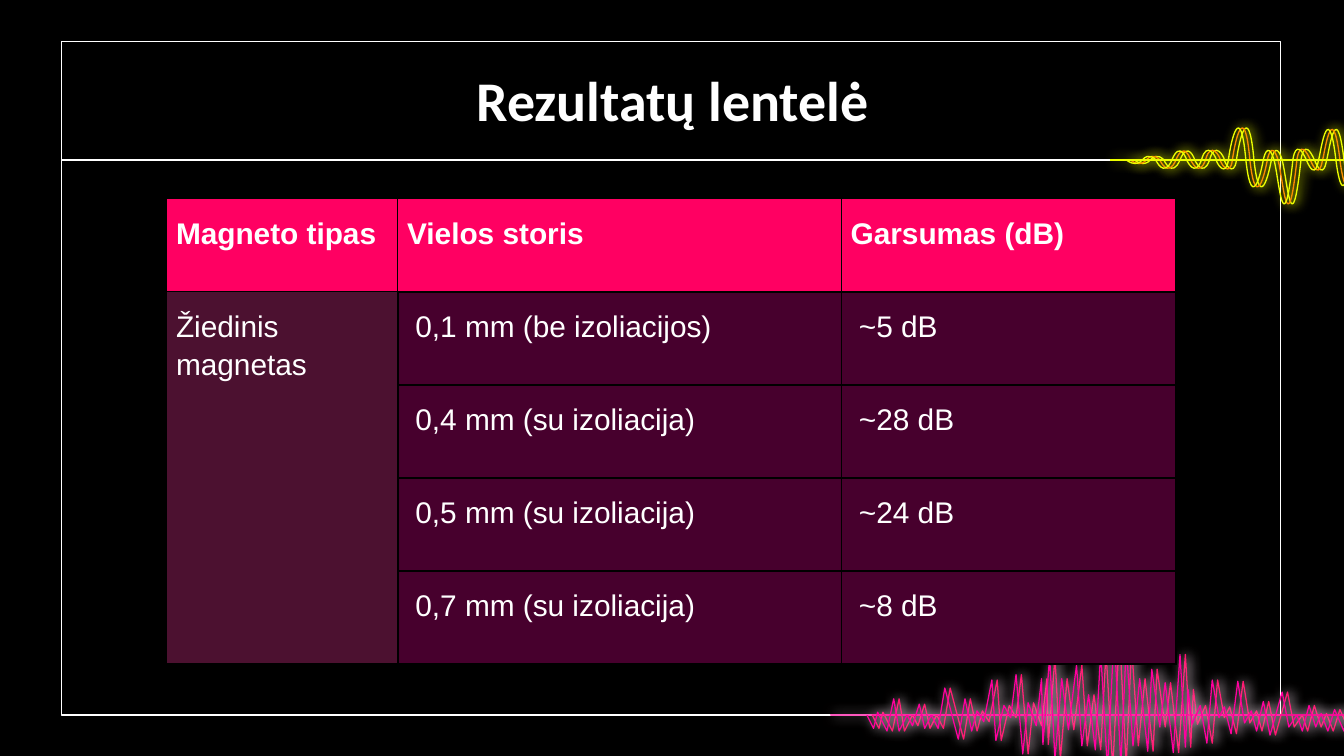
from lxml import etree
from pptx import Presentation
from pptx import util as u
from pptx.dml.color import RGBColor
from pptx.enum import shapes, text
from pptx.oxml import parse_xml
from pptx.oxml.ns import nsdecls, qn

C = {"black": "000000", "white": "FFFFFF", "yellow": "EDFF00", "orange": "FF7D00",
     "pink": "FF0062", "magenta": "FF009E", "glow": "FFEBF8",
     "plum": "4C1130", "wine": "47002D"}


def outline(sp, color, width, glow=None):
    sp.line.color.rgb = RGBColor.from_string(C[color])
    sp.line.width = u.Pt(width)
    effects = etree.SubElement(sp._element.spPr, qn("a:effectLst"))
    if glow:
        effects.append(parse_xml(
            f'<a:outerShdw {nsdecls("a")} blurRad="{u.Pt(6.8)}" dist="{u.Pt(1.5)}" dir="0" '
            f'algn="bl" rotWithShape="0"><a:srgbClr val="{C[glow]}"/></a:outerShdw>'))


def trace(points, close):
    pts = [(u.Inches(x), u.Inches(y)) for x, y in points]
    fb = s.shapes.build_freeform(*pts[0])
    fb.add_line_segments(pts[1:], close=close)
    sp = fb.convert_to_shape()
    sp.fill.background()
    return sp


prs = Presentation()
prs.slide_width = u.Inches(10)
prs.slide_height = u.Inches(10 * 9 / 16)
s = prs.slides.add_slide(prs.slide_layouts[5])
s.background.fill.solid()
s.background.fill.fore_color.rgb = RGBColor.from_string(C["black"])

frame = s.shapes.add_shape(shapes.MSO_SHAPE.ROUNDED_RECTANGLE, u.Inches(0.46),
                           u.Inches(0.31), u.Inches(9.07), u.Inches(5.01))
frame.adjustments[0] = 0
frame.fill.background()
outline(frame, "white", 0.75)

AXIS = 1.19
rule = s.shapes.add_connector(shapes.MSO_CONNECTOR.STRAIGHT, u.Inches(0.46),
                              u.Inches(AXIS), u.Inches(9.54), u.Inches(AXIS))
outline(rule, "white", 0.75)

CURVES = [
    (8.38, 1.19, 8.45, 1.25, 8.5), (8.55, 1.13, 8.6, 1.19, 8.6),
    (8.6, 1.19, 8.66, 1.33, 8.72), (8.78, 1.04, 8.83, 1.19, 8.83),
    (8.83, 1.19, 8.89, 1.33, 8.94), (8.98, 1.04, 9.05, 1.17, 9.05),
    (9.05, 1.21, 9.12, 1.33, 9.14), (9.16, 1.04, 9.23, 0.74, 9.27),
    (9.32, 1.64, 9.4, 1.19, 9.4), (9.4, 1.19, 9.43, 1.03, 9.48),
    (9.52, 1.35, 9.55, 1.84, 9.62), (9.62, 1.19, 9.64, 1.01, 9.72),
    (9.79, 1.36, 9.81, 1.19, 9.81), (9.82, 1.19, 9.88, 0.68, 9.94),
    (9.94, 1.19, 9.99, 1.62, 10.04), (10.1, 0.76, 10.11, 0.51, 10.18),
    (10.18, 1.19, 10.21, 1.34, 10.28), (10.34, 1.04, 10.37, 1.15, 10.38),
    (10.38, 1.22, 10.46, 1.3, 10.48), (10.5, 1.07, 10.58, 1.13, 10.61),
    (10.63, 1.25, 10.69, 1.27, 10.69), (10.69, 1.11, 10.77, 0.28, 10.83),
    (10.83, 1.19, 10.9, 2.03, 10.96), (10.96, 1.19, 10.99, 0.99, 11.04),
    (11.04, 1.19, 11.1, 1.61, 11.15), (11.15, 1.19, 11.21, 0.63, 11.28),
    (11.28, 1.19, 11.3, 1.34, 11.35), (11.41, 1.04, 11.46, 1.15, 11.48),
    (11.51, 1.23, 11.55, 1.21, 11.58), (11.61, 1.16, 11.64, 1.14, 11.69)]
for color, dx in [("yellow", 0.06), ("orange", 0.03), ("axis", 0), ("yellow", 0)]:
    if color == "axis":
        outline(trace([(8.26, AXIS), (11.82, AXIS)], False), "yellow", 0.71, "yellow")
        continue
    points = [(8.38 + dx, AXIS)]
    for x1, y1, x2, y2, x in CURVES:
        points += [(x1 + dx, y1), (x2 + dx, y2), (x + dx, AXIS)]
    wave = trace(points, False)
    track = next(wave._element.iter(qn("a:path")))
    segments = track.findall(qn("a:lnTo"))
    for i in range(0, len(segments), 3):
        curve = etree.SubElement(track, qn("a:cubicBezTo"))
        for seg in segments[i:i + 3]:
            curve.append(seg[0])
            track.remove(seg)
    outline(wave, color, 0.71, "yellow")

BASE = 5.32
PEAKS = [
    (10.16, 5.32), (10.12, 5.39), (10.07, 5.3), (10.04, 5.44), (9.97, 5.28), (9.92, 5.44),
    (9.87, 5.31), (9.83, 5.41), (9.78, 5.25), (9.73, 5.44), (9.69, 5.32), (9.63, 5.41),
    (9.58, 5.15), (9.49, 5.47), (9.44, 5.22), (9.39, 5.44), (9.35, 5.29), (9.3, 5.38),
    (9.25, 5.07), (9.2, 5.46), (9.15, 5.26), (9.11, 5.34), (9.06, 5.06), (9.02, 5.53),
    (8.97, 5.25), (8.91, 5.39), (8.88, 5.13), (8.86, 5.56), (8.82, 4.87), (8.77, 5.6),
    (8.71, 5.08), (8.67, 5.41), (8.61, 4.98), (8.58, 5.59), (8.52, 5.05), (8.47, 5.55),
    (8.42, 4.81), (8.38, 5.69), (8.33, 4.71), (8.28, 5.72), (8.23, 4.85), (8.19, 5.58),
    (8.14, 5.17), (8.09, 5.55), (8.05, 4.95), (7.99, 5.43), (7.94, 5.05), (7.89, 5.65),
    (7.85, 4.89), (7.8, 5.54), (7.79, 5.05), (7.75, 5.4), (7.69, 5.23), (7.65, 5.61),
    (7.6, 5.02), (7.56, 5.34), (7.51, 5.25), (7.45, 5.51), (7.42, 5.06), (7.36, 5.37),
    (7.31, 5.29), (7.27, 5.44), (7.22, 5.2), (7.17, 5.5), (7.07, 5.12), (7.02, 5.42),
    (6.97, 5.32), (6.92, 5.42), (6.88, 5.24), (6.83, 5.4), (6.79, 5.32), (6.73, 5.44),
    (6.69, 5.2), (6.64, 5.44), (6.57, 5.3), (6.54, 5.42), (6.49, 5.32)]
shifted = [(x - 0.04, y) for x, y in PEAKS]
for color, points in [("pink", PEAKS),
                      ("magenta", [(10.4, BASE), *shifted, (6.18, BASE)])]:
    outline(trace(points, True), color, 0.69, "glow")

title = s.shapes.title
title.left, title.top = u.Inches(0.79), u.Inches(0.42)
title.width, title.height = u.Inches(8.43), u.Inches(0.63)
tf = title.text_frame
tf.text = "Rezultatų lentelė"
tf.vertical_anchor = text.MSO_ANCHOR.MIDDLE
tf.margin_left = tf.margin_right = tf.margin_top = tf.margin_bottom = u.Inches(0.1)
p = tf.paragraphs[0]
p.alignment = text.PP_ALIGN.CENTER
f = p.runs[0].font
f.name, f.size, f.bold = "Calibri", u.Pt(30), True
f.color.rgb = RGBColor.from_string(C["white"])

ROWS = [("Magneto tipas", "Vielos storis", "Garsumas (dB)"),
        ("Žiedinis magnetas", " 0,1 mm (be izoliacijos)", " ~5 dB"),
        ("", " 0,4 mm (su izoliacija)", " ~28 dB"),
        ("", " 0,5 mm (su izoliacija)", " ~24 dB"),
        ("", " 0,7 mm (su izoliacija)", " ~8 dB")]
WIDTHS = [1.72, 3.3, 2.49]
HEIGHT = 3.46
tbl = s.shapes.add_table(len(ROWS), len(WIDTHS), u.Inches(1.24), u.Inches(1.48),
                         u.Inches(sum(WIDTHS)), u.Inches(HEIGHT)).table
tbl.horz_banding = False
for col, w in zip(tbl.columns, WIDTHS):
    col.width = u.Inches(w)
for i, row in enumerate(ROWS):
    tbl.rows[i].height = u.Inches(HEIGHT / len(ROWS))
    for j, label in enumerate(row):
        cell = tbl.cell(i, j)
        head, side = i == 0, j == 0
        cell.margin_left = cell.margin_right = u.Inches(0.07)
        cell.margin_top = cell.margin_bottom = u.Inches(0.1)
        tcPr = cell._tc.get_or_add_tcPr()
        for edge in "LRTB":
            thick = not (head or side) or (head and not side and edge == "B") \
                or (side and not head and edge == "R")
            tcPr.append(parse_xml(
                f'<a:ln{edge} {nsdecls("a")} w="{u.Pt(1 if thick else 0.6)}"><a:solidFill>'
                f'<a:srgbClr val="{C["black"]}"/></a:solidFill></a:ln{edge}>'))
        cell.fill.solid()
        fill = "pink" if head else "plum" if side else "wine"
        cell.fill.fore_color.rgb = RGBColor.from_string(C[fill])
        if not label:
            continue
        p = cell.text_frame.paragraphs[0]
        p.text = label
        p.line_spacing, p.space_before = 1.15, u.Pt(12)
        f = p.runs[0].font
        f.name, f.size, f.bold = "Arial", u.Pt(16), head
        f.color.rgb = RGBColor.from_string(C["white"])
tbl.cell(1, 0).merge(tbl.cell(4, 0))

prs.save("out.pptx")
